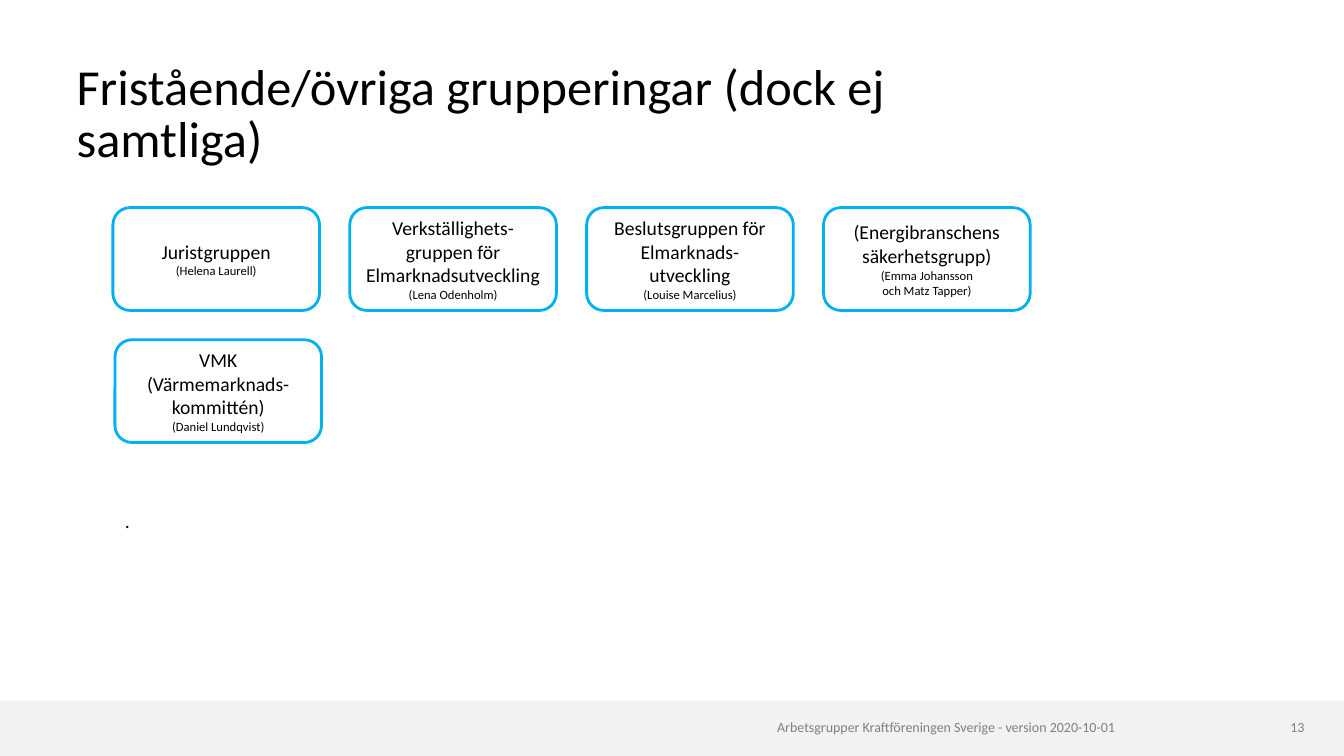
from pptx import Presentation
from pptx.dml.color import RGBColor
from pptx.enum.shapes import MSO_SHAPE
from pptx.enum.text import MSO_ANCHOR, MSO_AUTO_SIZE, PP_ALIGN
from pptx.util import Pt

# Content
TITLE = "Fristående/övriga grupperingar (dock ej samtliga)"
FOOTER = "Arbetsgrupper Kraftföreningen Sverige - version 2020-10-01"
PAGE_NUMBER = "13"
REMARK = "."
GROUP_ROWS = [
    [
        ("Juristgruppen", "(Helena Laurell)"),
        ("Verkställighets-gruppen för Elmarknadsutveckling", "(Lena Odenholm)"),
        ("Beslutsgruppen för Elmarknads-utveckling", "(Louise Marcelius)"),
        ("(Energibranschens säkerhetsgrupp)", "(Emma Johansson\voch Matz Tapper)"),
    ],
    [("VMK (Värmemarknads-kommittén)", "(Daniel Lundqvist)")],
]

# Style
FONT = "Calibri"
BLACK = RGBColor(0x00, 0x00, 0x00)
GREY = RGBColor(0x80, 0x80, 0x80)
BAND = RGBColor(0xF2, 0xF2, 0xF2)
BLUE = RGBColor(0x00, 0xB0, 0xF0)

# Layout in points
PAGE_WIDTH, PAGE_HEIGHT = 960, 540
BAND_HEIGHT = 39.6
ROW_STARTS = [(80.64, 148.32), (82.08, 242.64)]
GROUP_WIDTH, GROUP_HEIGHT, GROUP_STEP = 147.6, 73.44, 169.2


def style(para, size, color=BLACK, align=PP_ALIGN.LEFT):
    para.alignment = align
    para.font.name = FONT
    para.font.size = Pt(size)
    para.font.color.rgb = color


def clear_margins(frame):
    frame.margin_left = frame.margin_right = Pt(0)
    frame.margin_top = frame.margin_bottom = Pt(0)


def add_shape(page, kind, left, top, width, height):
    shape = page.shapes.add_shape(kind, Pt(left), Pt(top), Pt(width), Pt(height))
    shape.shadow.inherit = False
    return shape


def add_text(page, text, left, top, width, height):
    box = page.shapes.add_textbox(Pt(left), Pt(top), Pt(width), Pt(height))
    box.text_frame.word_wrap = True
    box.text_frame.text = text
    return box.text_frame


def add_group(page, name, leader, left, top):
    box = add_shape(page, MSO_SHAPE.ROUNDED_RECTANGLE, left, top,
                    GROUP_WIDTH, GROUP_HEIGHT)
    box.fill.background()
    box.line.color.rgb = BLUE
    box.line.width = Pt(2)
    frame = box.text_frame
    frame.word_wrap = True
    frame.vertical_anchor = MSO_ANCHOR.MIDDLE
    frame.text = name
    style(frame.paragraphs[0], 14, align=PP_ALIGN.CENTER)
    para = frame.add_paragraph()
    para.text = leader
    style(para, 9, align=PP_ALIGN.CENTER)


def main():
    deck = Presentation()
    deck.slide_width, deck.slide_height = Pt(PAGE_WIDTH), Pt(PAGE_HEIGHT)
    page = deck.slides.add_slide(deck.slide_layouts[5])

    # Footer band with text and page number
    band = add_shape(page, MSO_SHAPE.RECTANGLE, 0, PAGE_HEIGHT - BAND_HEIGHT,
                     PAGE_WIDTH, BAND_HEIGHT)
    band.fill.solid()
    band.fill.fore_color.rgb = BAND
    band.line.fill.background()
    for text, left, width in [(FOOTER, 158.4, 637.92), (PAGE_NUMBER, 903.6, 28.08)]:
        frame = add_text(page, text, left, 513.36, width, 14)
        clear_margins(frame)
        style(frame.paragraphs[0], 10, GREY, PP_ALIGN.RIGHT)

    # Title
    title = page.shapes.title
    title.left, title.top = Pt(54.72), Pt(42.48)
    title.width, title.height = Pt(683.28), Pt(77.04)
    frame = title.text_frame
    frame.text = TITLE
    frame.word_wrap = True
    frame.auto_size = MSO_AUTO_SIZE.NONE
    frame.vertical_anchor = MSO_ANCHOR.BOTTOM
    clear_margins(frame)
    frame.paragraphs[0].line_spacing = 0.85
    style(frame.paragraphs[0], 36)

    # Working groups
    for groups, (left, top) in zip(GROUP_ROWS, ROW_STARTS):
        for column, (name, leader) in enumerate(groups):
            add_group(page, name, leader, left + column * GROUP_STEP, top)

    # Remark below the groups
    frame = add_text(page, REMARK, 82.08, 360, 480.24, 24.48)
    style(frame.paragraphs[0], 14)

    deck.save("out.pptx")


if __name__ == "__main__":
    main()
